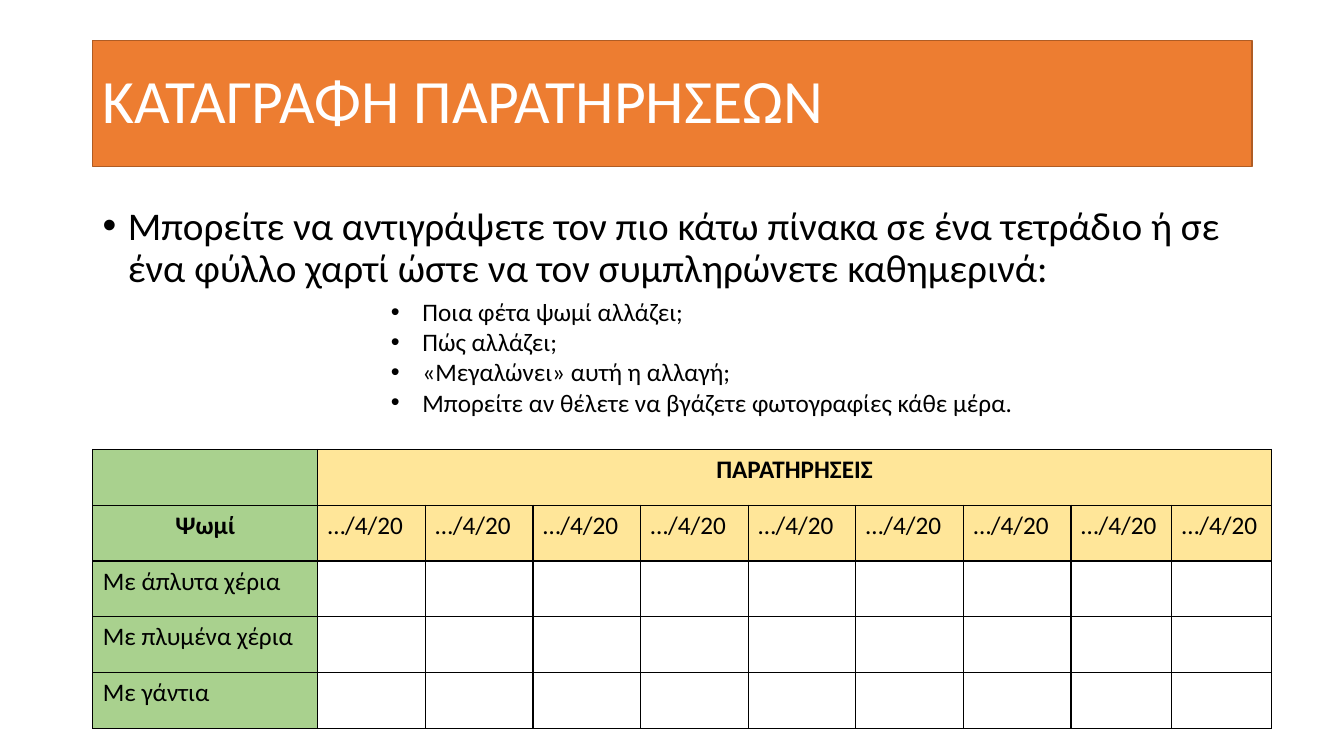
from pptx import Presentation
from pptx.dml.color import RGBColor as RGB
from pptx.enum.shapes import MSO_SHAPE as SHAPE
from pptx.enum.text import MSO_ANCHOR as ANCHOR, PP_ALIGN as ALIGN
from pptx.oxml.ns import qn
from pptx.util import Pt
from lxml import etree

THEME = {
    "font": "Calibri",
    "title": 44, "body": 28, "small": 18,
    "black": RGB.from_string("000000"), "white": RGB.from_string("FFFFFF"),
    "orange": RGB.from_string("ED7D31"), "rust": RGB.from_string("AF5C24"),
    "green": RGB.from_string("A9D18E"), "yellow": RGB.from_string("FFE699"),
}
LEFT, WIDTH = 66.24, 828


def write(p, text, size, color="black", bold=False, **layout):
    r = p.add_run()
    r.text = text
    font = {"name": THEME["font"], "size": Pt(THEME[size]), "bold": bold}
    for key, value in font.items():
        setattr(r.font, key, value)
    r.font.color.rgb = THEME[color]
    for key, value in layout.items():
        setattr(p, key, value)


def add_bullet(p, indent):
    pPr = p._p.get_or_add_pPr()
    pPr.set("marL", str(Pt(indent)))
    pPr.set("indent", str(-Pt(indent)))
    etree.SubElement(pPr, qn("a:buFont"), typeface="Arial")
    etree.SubElement(pPr, qn("a:buChar"), char="•")


prs = Presentation()
prs.slide_width, prs.slide_height = Pt(960), Pt(540)
s = prs.slides.add_slide(prs.slide_layouts[6])

# Introduction
sp = s.shapes.add_textbox(Pt(LEFT), Pt(144), Pt(WIDTH), Pt(75.6))
tf = sp.text_frame
tf.word_wrap = True
p = tf.paragraphs[0]
write(p, "Μπορείτε να αντιγράψετε τον πιο κάτω πίνακα σε ένα τετράδιο ή σε "
         "ένα φύλλο χαρτί ώστε να τον συμπληρώνετε καθημερινά:",
      "body", line_spacing=0.9, space_before=Pt(10))
add_bullet(p, 18)

# Title banner
sp = s.shapes.add_shape(SHAPE.RECTANGLE, Pt(LEFT), Pt(28.8), Pt(WIDTH), Pt(90))
sp.shadow.inherit = False
sp.fill.solid()
sp.fill.fore_color.rgb = THEME["orange"]
sp.line.color.rgb = THEME["rust"]
sp.line.width = Pt(1)
tf = sp.text_frame
tf.vertical_anchor = ANCHOR.MIDDLE
write(tf.paragraphs[0], "ΚΑΤΑΓΡΑΦΗ ΠΑΡΑΤΗΡΗΣΕΩΝ", "title", "white",
      line_spacing=0.9, alignment=ALIGN.LEFT)

# Questions
questions = [
    "Ποια φέτα ψωμί αλλάζει;",
    "Πώς αλλάζει;",
    "«Μεγαλώνει» αυτή η αλλαγή;",
    "Μπορείτε αν θέλετε να βγάζετε φωτογραφίες κάθε μέρα.",
]
sp = s.shapes.add_textbox(Pt(272.16), Pt(208.08), Pt(515.5), Pt(94.3))
tf = sp.text_frame
tf.word_wrap = True
for i, question in enumerate(questions):
    p = tf.add_paragraph() if i else tf.paragraphs[0]
    write(p, question, "small")
    add_bullet(p, 22.5)

# Observation table
widths = [160.7] + [76.9] * 7 + [72, 71.1]
row_heads = ["", "Ψωμί", "Με άπλυτα χέρια", "Με πλυμένα χέρια", "Με γάντια"]
table = s.shapes.add_table(len(row_heads), len(widths), Pt(LEFT), Pt(321.1),
                           Pt(sum(widths)), Pt(199)).table
table.first_row = table.horz_banding = False
for col, width in zip(table.columns, widths):
    col.width = Pt(width)
for row in table.rows:
    row.height = Pt(39.8)

# Cell borders and fills
for y in range(len(row_heads)):
    for x in range(len(widths)):
        cell = table.cell(y, x)
        tcPr = cell._tc.get_or_add_tcPr()
        for side in ("lnL", "lnR", "lnT", "lnB"):
            ln = etree.SubElement(tcPr, qn(f"a:{side}"), w=str(Pt(1)))
            fill = etree.SubElement(ln, qn("a:solidFill"))
            etree.SubElement(fill, qn("a:srgbClr"), val=str(THEME["black"]))
        if x == 0 or y < 2:
            cell.fill.solid()
            cell.fill.fore_color.rgb = THEME["yellow" if x else "green"]
        else:
            cell.fill.background()

# Cell text
heading = {"bold": True, "alignment": ALIGN.CENTER}
table.cell(0, 1).merge(table.cell(0, len(widths) - 1))
write(table.cell(0, 1).text_frame.paragraphs[0], "ΠΑΡΑΤΗΡΗΣΕΙΣ", "small", **heading)
for y, text in enumerate(row_heads):
    if text:
        write(table.cell(y, 0).text_frame.paragraphs[0], text, "small",
              **(heading if y == 1 else {}))
for x in range(1, len(widths)):
    write(table.cell(1, x).text_frame.paragraphs[0], "…/4/20", "small")

prs.save("out.pptx")
